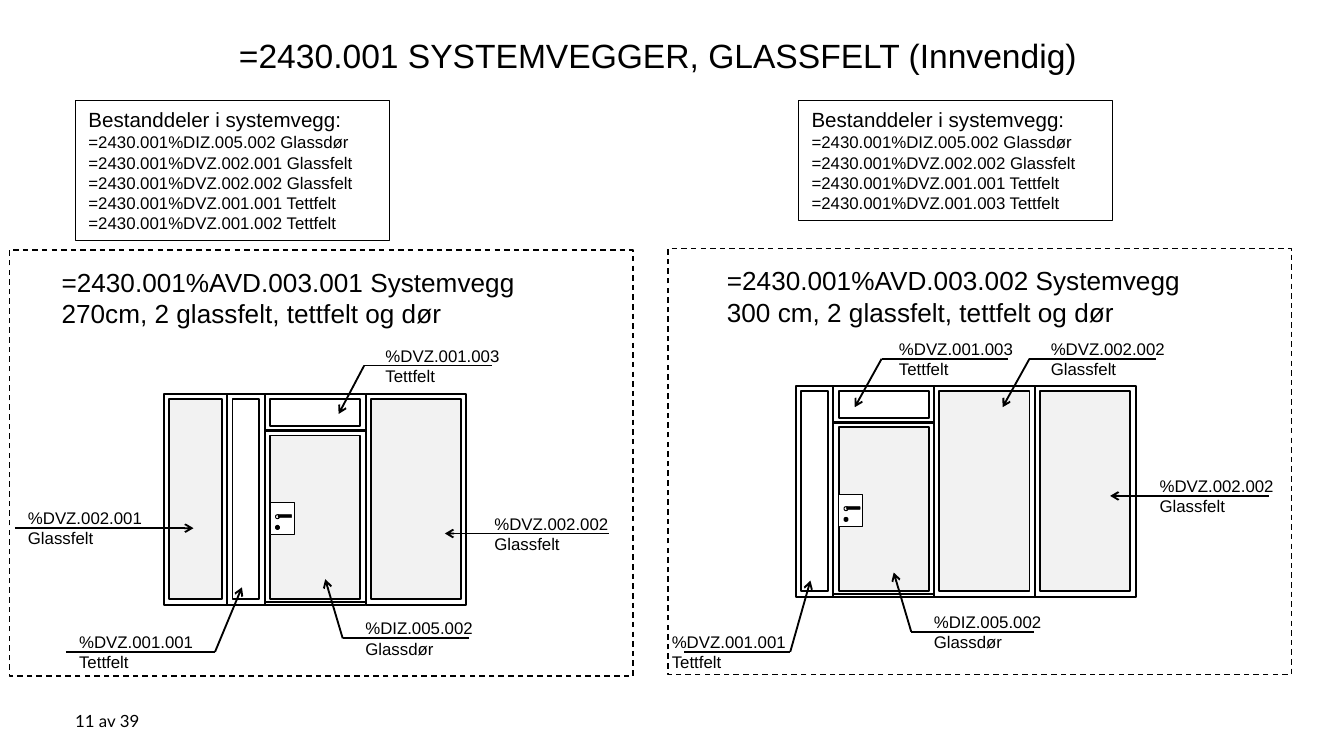
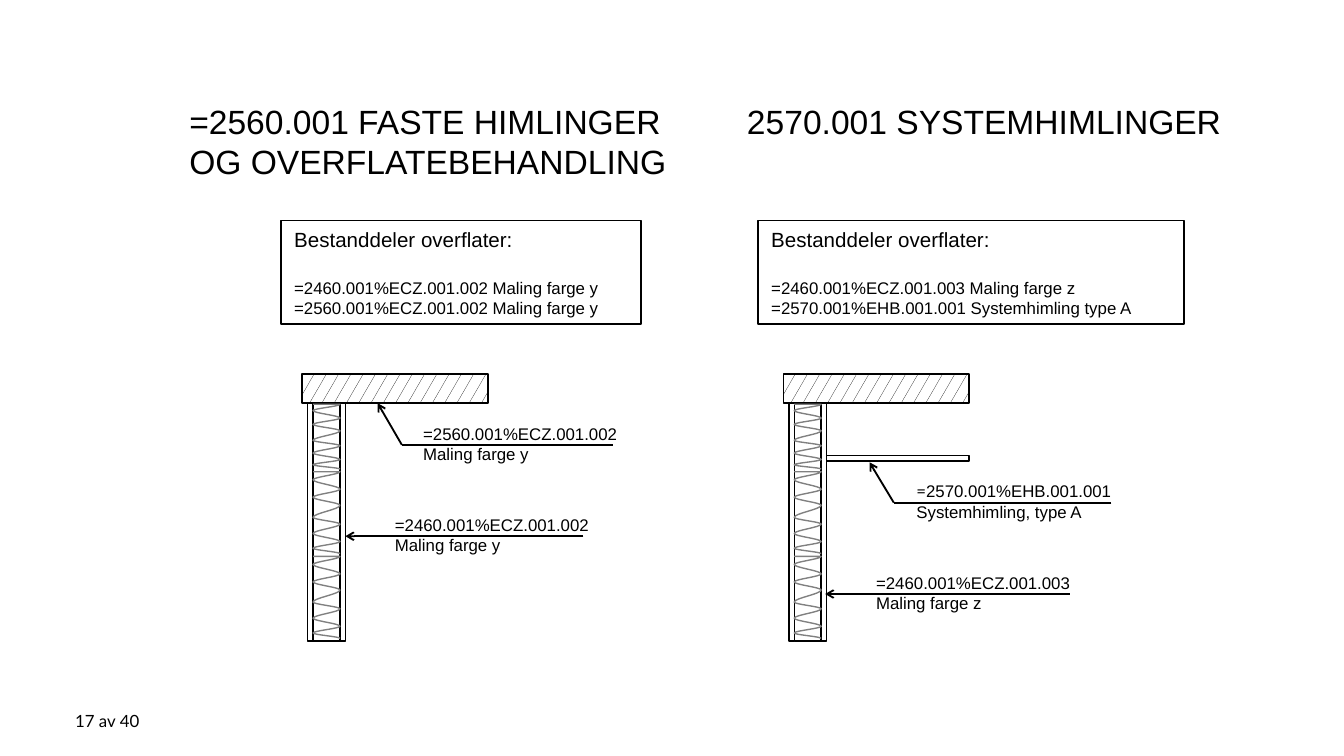
from lxml import etree
from pptx import Presentation
from pptx.dml.color import RGBColor
from pptx.enum.dml import MSO_LINE, MSO_PATTERN
from pptx.enum.shapes import MSO_CONNECTOR, MSO_SHAPE
from pptx.enum.text import MSO_ANCHOR, MSO_AUTO_SIZE, PP_ALIGN
from pptx.oxml.ns import qn
from pptx.util import Inches, Pt

RECT, OVAL = MSO_SHAPE.RECTANGLE, MSO_SHAPE.OVAL
LEVER = MSO_SHAPE.ROUND_2_SAME_RECTANGLE
STRAIGHT = MSO_CONNECTOR.STRAIGHT
DASH, HATCH = MSO_LINE.DASH, MSO_PATTERN.SMALL_CONFETTI
TOP, MIDDLE, LEFT = MSO_ANCHOR.TOP, MSO_ANCHOR.MIDDLE, PP_ALIGN.LEFT
GROW, FIXED = MSO_AUTO_SIZE.SHAPE_TO_FIT_TEXT, MSO_AUTO_SIZE.NONE

BLACK, WHITE, GLASS, WOOL = "000000", "FFFFFF", "F2F2F2", "808080"
SANS, FOOT = "Arial", "Lato"
RIM = 0.04            # frame width, also the sheet thickness
WALL = 1.57           # height of a system wall
HEAD = 0.28           # height of the panel above a door
CORE, STUD = 0.2, 1.77
TURNS = [0.01, 0.01, 0.07, 0.14, 0.2, 0.26, 0.35, 0.4, 0.47, 0.53, 0.58, 0.62]
COILS = [(0, 0.49), (0.5, 0.62), (1.13, 0.62)]


def color(code):
    return RGBColor.from_string(code)


# Basic parts
def shape(s, x, y, w, h, fill=None, line=1, kind=RECT):
    part = s.shapes.add_shape(kind, Inches(x), Inches(y), Inches(w), Inches(h))
    style(part, fill, line)
    return part


def style(part, fill, line, ink=BLACK):
    part.shadow.inherit = False
    if fill:
        part.fill.solid()
        part.fill.fore_color.rgb = color(fill)
    else:
        part.fill.background()
    part.line.color.rgb = color(ink)
    part.line.width = Pt(line)


def stroke(s, start, end, arrow=False):
    ends = [Inches(v) for v in (*start, *end)]
    part = s.shapes.add_connector(STRAIGHT, *ends)
    part.line.color.rgb = color(BLACK)
    part.line.width = Pt(1)
    props = part._element.spPr
    if arrow:
        etree.SubElement(props.find(qn("a:ln")), qn("a:tailEnd"),
                         type="arrow", w="sm", len="sm")
    etree.SubElement(props, qn("a:effectLst"))


def write(part, lines, gaps=()):
    """Each line is a list of runs: text, size, font."""
    frame = part.text_frame
    frame.word_wrap = True
    frame.auto_size = GROW
    frame.vertical_anchor = TOP
    for i, runs in enumerate(lines):
        para = frame.paragraphs[0] if i == 0 else frame.add_paragraph()
        para.alignment = LEFT
        if i in gaps:
            para.space_before = Pt(13.7)
        for text, size, font in runs:
            run = para.add_run()
            run.text = text
            run.font.size = Pt(size)
            run.font.name = font
            run.font.color.rgb = color(BLACK)
    return frame


def label(s, x, y, w, h, size, *lines):
    box = s.shapes.add_textbox(Inches(x), Inches(y), Inches(w), Inches(h))
    return write(box, [[(text, size, SANS)] for text in lines])


def title(s, x, y, w, h, *lines):
    label(s, x, y, w, h, 18, *lines)


def footer(s, text):
    box = s.shapes.add_textbox(Inches(0.56), Inches(5.21), Inches(1.9), Inches(0.3))
    frame = write(box, [[(text, 9, FOOT)]])
    frame.auto_size = FIXED
    frame.margin_left = 0
    frame.vertical_anchor = MIDDLE


def parts(s, x, y, w, h, head, items, gaps=()):
    box = shape(s, x, y, w, h, line=0.75)
    write(box, [[(head, 11, SANS)]] + [[(item, 9, SANS)] for item in items], gaps)


def callout(s, x, y, note, rise=0.2):
    """Text on a shelf line; the last leg of the route is the arrow."""
    runs, dx, w, route = note
    if isinstance(runs, str):
        runs = [(runs, 9, SANS)]
    pts = [(x + px, y + py) for px, py in route]
    box = s.shapes.add_textbox(Inches(x + dx), Inches(pts[0][1] - rise),
                               Inches(w), Inches(0.4))
    write(box, [runs])
    for i, (start, end) in enumerate(zip(pts, pts[1:])):
        stroke(s, start, end, arrow=i == len(pts) - 2)


# System walls
def pane(s, x, y, w, h, fill=None):
    shape(s, x + RIM, y + RIM, w - 2 * RIM, h - 2 * RIM, fill)
    shape(s, x, y, w, h)


def door(s, x, y, w):
    pane(s, x, y, w, HEAD)
    pane(s, x, y + HEAD - 0.01, w, WALL - HEAD + 0.01, GLASS)
    stroke(s, (x, y + 1.55), (x + w, y + 1.55))
    # Lock plate, keyhole and handle
    shape(s, x + RIM, y + 0.81, 0.18, 0.24, WHITE, 0.5)
    shape(s, x + 0.08, y + 0.98, 0.03, 0.03, BLACK, 0.5, OVAL)
    shape(s, x + 0.08, y + 0.9, 0.03, 0.03, None, 0.5, OVAL)
    shape(s, x + 0.14, y + 0.86, 0.02, 0.1, BLACK, 0.25, LEVER).rotation = 90


def wall(s, x, y, bays):
    for kind, w in bays:
        if kind == "door":
            door(s, x, y, w)
        else:
            pane(s, x, y, w, WALL, GLASS if kind == "glass" else None)
        x += w


def panel(s, x, y, name, spot, bays, notes):
    shape(s, x, y, 4.64, 3.17, line=0.75).line.dash_style = DASH
    dx, w, text = name
    label(s, x + dx, y + 0.07, w, 0.57, 14, text)
    wall(s, x + spot[0], y + spot[1], bays)
    for note in notes:
        callout(s, x, y, note)


# Ceiling sections
def coil(s, x, y, h):
    scale = h / TURNS[-1]
    pts = [(x, y + TURNS[0] * scale)]
    for i, (a, b) in enumerate(zip(TURNS, TURNS[1:])):
        old, new = (x, x + CORE) if i % 2 == 0 else (x + CORE, x)
        third = (b - a) / 3
        for px, py in ((old, a + third), (new, b - third), (new, b)):
            pts.append((px, y + py * scale))
    pts = [(Inches(px), Inches(py)) for px, py in pts]
    pen = s.shapes.build_freeform(*pts[0])
    pen.add_line_segments(pts[1:], close=False)
    wave = pen.convert_to_shape()
    style(wave, None, 0.75, WOOL)
    # Every three points become one curve
    legs = list(wave._element.iter(qn("a:lnTo")))
    for i in range(0, len(legs), 3):
        curve = etree.Element(qn("a:cubicBezTo"))
        legs[i].addprevious(curve)
        for leg in legs[i:i + 3]:
            curve.append(leg[0])
            leg.getparent().remove(leg)


def section(s, x, y, notes, hung=False):
    slab = shape(s, x, y, 1.38, 0.22)
    slab.fill.patterned()
    slab.fill.pattern = HATCH
    slab.fill.fore_color.rgb = color(BLACK)
    slab.fill.back_color.rgb = color(WHITE)
    # Sheet, core, sheet
    left, top = x + RIM, y + 0.22
    for w in (RIM, CORE, RIM):
        shape(s, left, top, w, STUD, line=0.75)
        left += w
    for drop, h in COILS:
        coil(s, x + 2 * RIM, top + drop, h)
    if hung:
        shape(s, left, y + 0.61, 1.06, RIM, line=0.75)
    for note in notes:
        callout(s, x, y, note, 0.21)


# Slides
def walls(s):
    title(s, 1.68, 0.21, 6.73, 0.4, "=2430.001 SYSTEMVEGGER, GLASSFELT (Innvendig)")
    head = "Bestanddeler i systemvegg:"
    parts(s, 0.56, 0.75, 2.34, 1.04, head, [
        "=2430.001%DIZ.005.002 Glassdør",
        "=2430.001%DVZ.002.001 Glassfelt",
        "=2430.001%DVZ.002.002 Glassfelt",
        "=2430.001%DVZ.001.001 Tettfelt",
        "=2430.001%DVZ.001.002 Tettfelt"])
    parts(s, 5.94, 0.75, 2.34, 0.89, head, [
        "=2430.001%DIZ.005.002 Glassdør",
        "=2430.001%DVZ.002.002 Glassfelt",
        "=2430.001%DVZ.001.001 Tettfelt",
        "=2430.001%DVZ.001.003 Tettfelt"])
    panel(s, 0.07, 1.86,
          (0.29, 4.06, "=2430.001%AVD.003.001 Systemvegg 270cm, 2 glassfelt, tettfelt og dør"),
          (1.15, 1.07),
          [("glass", 0.47), ("solid", 0.28), ("door", 0.75), ("glass", 0.75)],
          [("%DIZ.005.002 Glassdør", 2.55, 1.07, [(3.42, 2.89), (2.48, 2.89), (2.35, 2.45)]),
           ("%DVZ.002.002 Glassfelt", 3.51, 1.07, [(4.46, 2.11), (3.24, 2.11)]),
           ("%DVZ.002.001 Glassfelt", 0.04, 1.07, [(0.04, 2.07), (1.37, 2.07)]),
           ("%DVZ.001.001 Tettfelt", 0.42, 1.12, [(0.42, 2.99), (1.53, 2.99), (1.73, 2.51)]),
           ("%DVZ.001.003 Tettfelt", 2.7, 1.07, [(3.59, 0.86), (2.64, 0.86), (2.45, 1.22)])])
    panel(s, 4.97, 1.85,
          (0.34, 3.68, "=2430.001%AVD.003.002 Systemvegg 300 cm, 2 glassfelt, tettfelt og dør"),
          (0.95, 1.02),
          [("solid", 0.28), ("door", 0.75), ("glass", 0.75), ("glass", 0.75)],
          [("%DIZ.005.002 Glassdør", 1.88, 1.04, [(2.72, 2.85), (1.81, 2.85), (1.68, 2.41)]),
           ("%DVZ.001.001 Tettfelt", -0.07, 1.12, [(0.12, 3), (0.91, 3), (1.06, 2.47)]),
           ("%DVZ.001.003 Tettfelt", 1.62, 1.05, [(2.53, 0.82), (1.59, 0.82), (1.39, 1.18)]),
           ("%DVZ.002.002 Glassfelt", 3.56, 1.07, [(4.47, 1.84), (3.29, 1.84)]),
           ("%DVZ.002.002 Glassfelt", 2.75, 1.11, [(3.63, 0.82), (2.69, 0.82), (2.49, 1.18)])])
    footer(s, "11 av 39")


def ceilings(s):
    title(s, 1.31, 0.7, 4.01, 1.01, "=2560.001 FASTE HIMLINGER", "OG OVERFLATEBEHANDLING")
    title(s, 5.46, 0.7, 3.76, 0.4, "2570.001 SYSTEMHIMLINGER")
    head = "Bestanddeler overflater:"
    parts(s, 2.09, 1.64, 2.68, 0.77, head, [
        "=2460.001%ECZ.001.002 Maling farge y",
        "=2560.001%ECZ.001.002 Maling farge y"], gaps=[1])
    parts(s, 5.64, 1.64, 3.17, 0.77, head, [
        "=2460.001%ECZ.001.003 Maling farge z",
        "=2570.001%EHB.001.001 Systemhimling type A"], gaps=[1])
    section(s, 2.25, 2.78, [
        ("=2560.001%ECZ.001.002 Maling farge y", 0.8, 1.71,
         [(2.31, 0.53), (0.74, 0.53), (0.56, 0.22)]),
        ("=2460.001%ECZ.001.002 Maling farge y", 0.59, 1.67,
         [(2.09, 1.21), (0.32, 1.21)])])
    section(s, 5.83, 2.78, [
        ([("=", 9, FOOT), ("2570.001%EHB.001.001 Systemhimling, type A", 9, SANS)], 0.89, 1.65,
         [(2.44, 0.96), (0.82, 0.96), (0.64, 0.66)]),
        ("=2460.001%ECZ.001.003 Maling farge z", 0.59, 1.72,
         [(2.13, 1.64), (0.31, 1.64)])], hung=True)
    footer(s, "17 av 40")


def main():
    deck = Presentation()
    deck.slide_width = Inches(10)
    deck.slide_height = deck.slide_width * 9 // 16
    for build in (walls, ceilings):
        build(deck.slides.add_slide(deck.slide_layouts[6]))
    deck.save("out.pptx")


if __name__ == "__main__":
    main()
